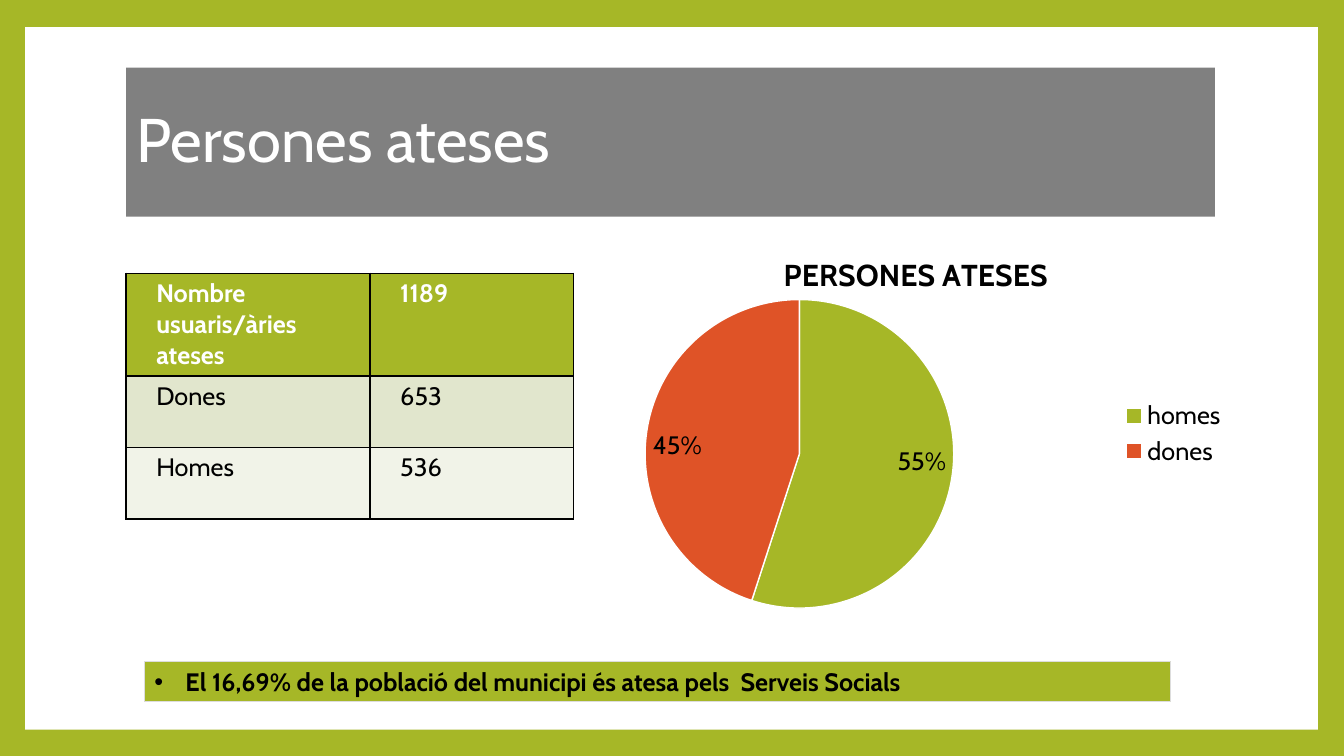
from lxml import etree
from pptx import Presentation
from pptx.chart.data import CategoryChartData
from pptx.dml.color import RGBColor
from pptx.enum.chart import XL_CHART_TYPE, XL_LABEL_POSITION, XL_LEGEND_POSITION
from pptx.enum.shapes import MSO_SHAPE
from pptx.enum.text import MSO_ANCHOR, MSO_AUTO_SIZE, PP_ALIGN
from pptx.oxml.ns import qn
from pptx.util import Inches, Pt

PIE = XL_CHART_TYPE.PIE
INSIDE_END = XL_LABEL_POSITION.INSIDE_END
LEGEND_RIGHT = XL_LEGEND_POSITION.RIGHT
RECTANGLE = MSO_SHAPE.RECTANGLE
TOP, MIDDLE = MSO_ANCHOR.TOP, MSO_ANCHOR.MIDDLE
NO_AUTOFIT = MSO_AUTO_SIZE.NONE
LEFT = PP_ALIGN.LEFT

FONT = "Cabin"
GREEN, ORANGE, GREY = "A6B727", "DF5327", "808080"
WHITE, BLACK, PALE_GREY = "FFFFFF", "000000", "DDDDDD"

ROWS = [
    ("Nombre usuaris/àries ateses", "1189"),
    ("Dones", "653"),
    ("Homes", "536"),
]
ROW_FILLS = [GREEN, "E1E6CD", "F1F3E8"]
ROW_HEIGHTS = [1.02, 0.71, 0.71]
COLUMN_WIDTHS = [2.42, 2.02]
SHARES = {"homes": (55, GREEN), "dones": (45, ORANGE)}


def set_values(target, values):
    for name, value in values.items():
        setattr(target, name, value)


def paint(fill, color):
    fill.solid()
    fill.fore_color.rgb = RGBColor.from_string(color)


def style_font(font, size, color, bold=False):
    set_values(font, {"name": FONT, "size": Pt(size), "bold": bold})
    font.color.rgb = RGBColor.from_string(color)


def place(shape, left, top, width, height):
    set_values(shape, {
        "left": Inches(left), "top": Inches(top),
        "width": Inches(width), "height": Inches(height),
    })


def fill_placeholder(box, text, area, fill, anchor, size, color, bold=False):
    """Move a placeholder, colour it and write its single paragraph."""
    place(box, *area)
    paint(box.fill, fill)
    frame = box.text_frame
    set_values(frame, {"word_wrap": True, "auto_size": NO_AUTOFIT,
                       "vertical_anchor": anchor})
    para = frame.paragraphs[0]
    set_values(para, {"alignment": LEFT, "space_before": Pt(0)})
    span = para.add_run()
    span.text = text
    style_font(span.font, size, color, bold)
    return para


def add_panel(slide):
    panel = slide.shapes.add_shape(
        RECTANGLE, Inches(0.25), Inches(0.27), Inches(12.82), Inches(6.97))
    panel.shadow.inherit = False
    paint(panel.fill, WHITE)
    panel.line.fill.background()
    # Send the panel behind the title
    slide.shapes.title._element.addprevious(panel._element)


def add_borders(cell, color, width):
    properties = cell._tc.get_or_add_tcPr()
    for side in ("lnL", "lnR", "lnT", "lnB"):
        line = etree.SubElement(properties, qn(f"a:{side}"), w=str(Pt(width)))
        solid = etree.SubElement(line, qn("a:solidFill"))
        etree.SubElement(solid, qn("a:srgbClr"), val=color)


def add_people_table(slide):
    table = slide.shapes.add_table(
        len(ROWS), len(COLUMN_WIDTHS), Inches(1.25), Inches(2.71),
        Inches(sum(COLUMN_WIDTHS)), Inches(sum(ROW_HEIGHTS))).table
    for column, width in zip(table.columns, COLUMN_WIDTHS):
        column.width = Inches(width)
    for row_index, (row, height) in enumerate(zip(table.rows, ROW_HEIGHTS)):
        row.height = Inches(height)
        is_header = row_index == 0
        for cell, text in zip(row.cells, ROWS[row_index]):
            set_values(cell, {
                "margin_left": Inches(0.3), "margin_right": Inches(0.3),
                "margin_top": Inches(0.05), "margin_bottom": Inches(0.05),
                "vertical_anchor": TOP,
            })
            add_borders(cell, BLACK, 1)
            paint(cell.fill, ROW_FILLS[row_index])
            span = cell.text_frame.paragraphs[0].add_run()
            span.text = text
            style_font(span.font, 18, WHITE if is_header else BLACK, is_header)


def set_plot_area(chart, left, top, width, height):
    """Fix the inner plot area as fractions of the chart."""
    area = chart._chartSpace.find(f".//{qn('c:plotArea')}")
    for old_layout in area.findall(qn("c:layout")):
        area.remove(old_layout)
    layout = etree.Element(qn("c:layout"))
    area.insert(0, layout)
    manual = etree.SubElement(layout, qn("c:manualLayout"))
    values = {"layoutTarget": "inner", "xMode": "edge", "yMode": "edge",
              "x": left, "y": top, "w": width, "h": height}
    for name, value in values.items():
        etree.SubElement(manual, qn(f"c:{name}"), val=str(value))


def add_share_chart(slide):
    data = CategoryChartData()
    data.categories = list(SHARES)
    data.add_series("Series 1", [value for value, _ in SHARES.values()])
    chart = slide.shapes.add_chart(
        PIE, Inches(5.9), Inches(2.33), Inches(6.37), Inches(3.94), data).chart
    style_font(chart.font, 18, BLACK)

    # Title and legend
    chart.has_title = True
    title_span = chart.chart_title.text_frame.paragraphs[0].add_run()
    title_span.text = "PERSONES ATESES"
    style_font(title_span.font, 21.6, BLACK, bold=True)
    chart.chart_title.include_text_frame = True
    chart.has_legend = True
    set_values(chart.legend, {"position": LEGEND_RIGHT,
                              "include_in_layout": False})
    style_font(chart.legend.font, 18, BLACK)

    # Slices and percentages
    plot = chart.plots[0]
    set_values(plot, {"vary_by_categories": True, "has_data_labels": True})
    set_values(plot.data_labels, {
        "show_percentage": True, "show_value": False, "position": INSIDE_END,
        "number_format": "0%", "number_format_is_linked": False,
    })
    style_font(plot.data_labels.font, 18, BLACK)
    for index, (_, color) in enumerate(SHARES.values()):
        slice_format = plot.series[0].points[index].format
        paint(slice_format.fill, color)
        paint(slice_format.line.fill, WHITE)
        slice_format.line.width = Pt(1)
    set_plot_area(chart, 0.065, 0.163, 0.507, 0.777)


def add_conclusion(box):
    para = fill_placeholder(
        box, "El 16,69% de la població del municipi és atesa pels  Serveis Socials",
        (1.43, 6.56, 10.18, 0.4), GREEN, TOP, 18, BLACK, bold=True)
    paint(box.line.fill, PALE_GREY)
    box.line.width = Pt(0.75)
    properties = para._p.get_or_add_pPr()
    properties.set("marL", str(Inches(0.31)))
    properties.set("indent", str(-Inches(0.31)))
    etree.SubElement(properties, qn("a:buFont"), typeface="Arial")
    etree.SubElement(properties, qn("a:buChar"), char="•")


def main():
    deck = Presentation()
    set_values(deck, {"slide_width": Inches(13.33), "slide_height": Inches(7.5)})
    page = deck.slides.add_slide(deck.slide_layouts[1])

    # Green frame around a white panel
    paint(page.background.fill, GREEN)
    add_panel(page)

    # Heading
    heading = fill_placeholder(
        page.shapes.title, "Persones ateses", (1.25, 0.67, 10.8, 1.48),
        GREY, MIDDLE, 44, WHITE)
    heading.line_spacing = 0.9

    # Figures and conclusion
    add_people_table(page)
    add_share_chart(page)
    add_conclusion(page.placeholders[1])
    deck.save("out.pptx")


if __name__ == "__main__":
    main()
